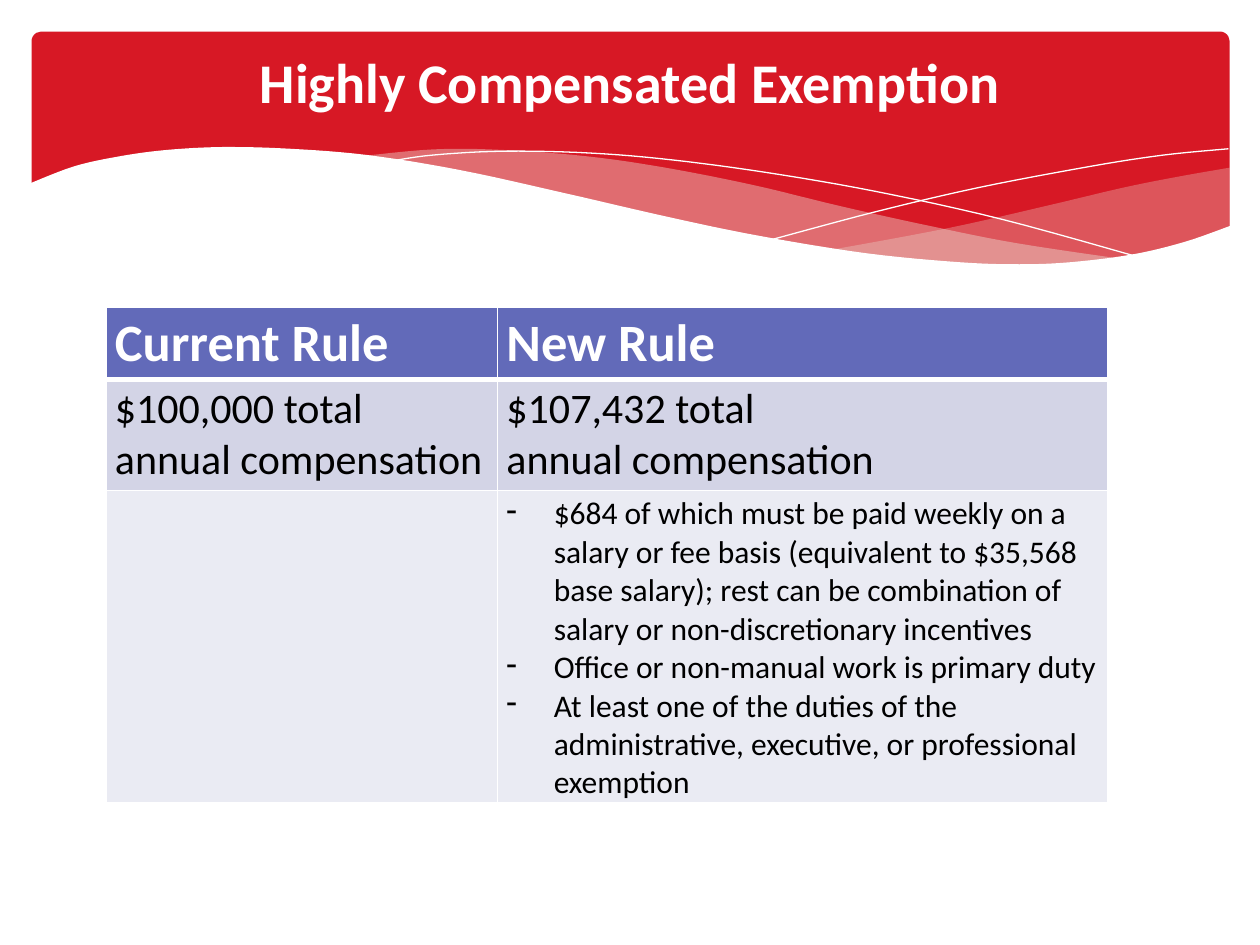
import dataclasses

import pptx
import pptx.dml.color
import pptx.enum.shapes
import pptx.enum.text
import pptx.oxml.ns
import pptx.util
from lxml import etree

Pt = pptx.util.Pt
qn = pptx.oxml.ns.qn


@dataclasses.dataclass(frozen=True)
class Theme:
    """Colours, font and type sizes of the slide."""
    font: str = "Calibri"
    banner: str = "D71825"
    wave: str = "EEECE1"
    white: str = "FFFFFF"
    black: str = "000000"
    rows: tuple = ("626AB9", "D3D4E6", "EAEBF3")
    row_sizes: tuple = (30, 24, 18)
    title_size: int = 32


THEME = Theme()

RIGHT_WAVE = (
    [(702.7, 95.8), (673, 101), (641.5, 107.3), (599, 117.4), (542, 130.3), (476, 142.6)],
    [(476, 142.6), (507.6, 147.6), (545, 150.5), (578, 151.9), (615, 150.5),
     (651.6, 145.4), (678, 138.2), (702.7, 129.6)],
)
LONG_WAVE = (
    [(643, 148.3), (581, 139), (533.5, 129.6), (481, 118), (430.6, 105.8), (380, 95.8),
     (335, 89.3), (287, 85.7), (247.7, 85.4), (206, 89.3)],
    [(206, 89.3), (246, 95), (291, 103.7), (323, 111.6), (381.6, 124.6), (432.7, 135.4),
     (489.6, 144.7), (530, 149.8), (573, 151.9), (610.6, 151.2), (643, 148.3)],
)
FALLING_LINE = [(222.5, 92.2), (247.7, 88.6), (288.7, 86.4), (337.7, 87.5), (384, 91.4),
                (438, 98.6), (500.4, 109.4), (572.4, 125.3), (653, 147.6)]
RISING_LINE = [(441.4, 136.8), (500.4, 121), (558.7, 107.3), (623.5, 95), (665, 88.6), (702, 85)]
LOWER_EDGE = [(703.4, 128.9), (677, 138.2), (647, 145.4), (612, 149.8), (582.5, 151),
              (548, 149.8), (495, 144.7), (434, 134.8), (381, 123.8), (322, 110.2),
              (263, 97.2), (210, 88.6), (165.6, 85), (127.4, 84), (95, 85.7),
              (68.4, 89.3), (42.5, 95), (16.6, 105)]
LOWER_CORNERS = [(16.6, 188.6), (703.4, 188.6)]

ROWS = [
    (["Current Rule"], ["New Rule"]),
    (["$100,000 total annual compensation"], ["$107,432 total\vannual compensation"]),
    ([], ["$684 of which must be paid weekly on a salary or fee basis (equivalent to "
          "$35,568 base salary); rest can be combination of salary or "
          "non-discretionary incentives",
          "Office or non-manual work is primary duty",
          "At least one of the duties of the administrative, executive, or "
          "professional exemption"]),
]
COL_WIDTHS = (223.75, 348.5)
ROW_HEIGHTS = (41, 63.5, 178.5)


def rgb(color):
    """Turn a hex string into a colour."""
    return pptx.dml.color.RGBColor.from_string(color)


def smooth(points, steps=6):
    """Sample a Catmull-Rom curve through the points."""
    ends = [points[0], *points, points[-1]]
    out = [points[0]]
    for a, b, c, d in zip(ends, ends[1:], ends[2:], ends[3:]):
        for i in range(1, steps + 1):
            t = i / steps
            out.append(tuple(
                q + (r - p) * t / 2 + (2 * p - 5 * q + 4 * r - v) * t ** 2 / 2
                + (3 * q - p - 3 * r + v) * t ** 3 / 2
                for p, q, r, v in zip(a, b, c, d)))
    return out


def paint(sp, color, alpha=None):
    """Fill a shape without outline, at an optional opacity in percent."""
    sp.shadow.inherit = False
    sp.line.fill.background()
    sp.fill.solid()
    sp.fill.fore_color.rgb = rgb(color)
    if alpha:
        clr = sp.fill._xPr.find(".//" + qn("a:srgbClr"))
        etree.SubElement(clr, qn("a:alpha"), val=str(alpha * 1000))


def add_outline(s, points, close):
    """Build a freeform through the points."""
    pts = [(Pt(x), Pt(y)) for x, y in points]
    builder = s.shapes.build_freeform(*pts[0])
    builder.add_line_segments(pts[1:], close=close)
    return builder.convert_to_shape()


def add_area(s, points, color, alpha=None):
    """Add a closed filled outline."""
    paint(add_outline(s, points, True), color, alpha)


def add_hairline(s, points):
    """Add a thin open curve."""
    sp = add_outline(s, smooth(points), False)
    sp.shadow.inherit = False
    sp.fill.background()
    sp.line.color.rgb = rgb(THEME.white)
    sp.line.width = Pt(0)


def add_banner(s):
    """Draw the banner with its waves."""
    sp = s.shapes.add_shape(pptx.enum.shapes.MSO_SHAPE.ROUNDED_RECTANGLE,
                            Pt(18), Pt(18), Pt(684.7), Pt(166.3))
    sp.adjustments[0] = 0.034
    paint(sp, THEME.banner)
    for (top, bottom), alpha in ((RIGHT_WAVE, 29), (LONG_WAVE, 40)):
        add_area(s, smooth(top) + smooth(bottom)[1:], THEME.wave, alpha)
    add_hairline(s, FALLING_LINE)
    add_hairline(s, RISING_LINE)
    add_area(s, smooth(LOWER_EDGE) + LOWER_CORNERS, THEME.white)


def format_run(r, size, color, bold):
    """Set the type of a run."""
    r.font.name = THEME.font
    r.font.size = Pt(size)
    r.font.bold = bold
    r.font.color.rgb = rgb(color)


def add_title(s, text):
    """Add the centred title."""
    tf = s.shapes.add_textbox(Pt(36), Pt(18), Pt(648), Pt(75)).text_frame
    tf.word_wrap = True
    tf.vertical_anchor = pptx.enum.text.MSO_ANCHOR.MIDDLE
    tf.margin_bottom = Pt(22)
    p = tf.paragraphs[0]
    p.text = text
    p.alignment = pptx.enum.text.PP_ALIGN.CENTER
    format_run(p.runs[0], THEME.title_size, THEME.white, True)


def set_borders(cell, top, bottom):
    """Give a cell white borders."""
    tc_pr = cell._tc.get_or_add_tcPr()
    for tag, width in (("a:lnL", 1), ("a:lnR", 1), ("a:lnT", top), ("a:lnB", bottom)):
        ln = etree.SubElement(tc_pr, qn(tag), w=str(Pt(width)))
        fill = etree.SubElement(ln, qn("a:solidFill"))
        etree.SubElement(fill, qn("a:srgbClr"), val=THEME.white)


def set_dash(p):
    """Give a paragraph a hanging dash bullet."""
    p_pr = p._p.get_or_add_pPr()
    p_pr.set("marL", str(Pt(27)))
    p_pr.set("indent", str(Pt(-27)))
    etree.SubElement(p_pr, qn("a:buChar"), char="-")


def fill_cell(cell, row, lines):
    """Style a cell and write its lines."""
    set_borders(cell, 3 if row == 1 else 1, 3 if row == 0 else 1)
    cell.fill.solid()
    cell.fill.fore_color.rgb = rgb(THEME.rows[row])
    cell.margin_left = cell.margin_right = Pt(5.2)
    cell.margin_top = cell.margin_bottom = Pt(2.6)
    tf = cell.text_frame
    for i, line in enumerate(lines):
        p = tf.add_paragraph() if i else tf.paragraphs[0]
        p.text = line
        if row == 2:
            set_dash(p)
        for r in p.runs:
            format_run(r, THEME.row_sizes[row], THEME.black if row else THEME.white, row == 0)


def add_rules(s):
    """Add the table that compares the rules."""
    table = s.shapes.add_table(len(ROWS), len(COL_WIDTHS), Pt(60.5), Pt(175.5),
                               Pt(sum(COL_WIDTHS)), Pt(sum(ROW_HEIGHTS))).table
    for col, width in zip(table.columns, COL_WIDTHS):
        col.width = Pt(width)
    for i, (height, cells) in enumerate(zip(ROW_HEIGHTS, ROWS)):
        table.rows[i].height = Pt(height)
        for j, lines in enumerate(cells):
            fill_cell(table.cell(i, j), i, lines)


def main():
    """Build and save the slide."""
    prs = pptx.Presentation()
    prs.slide_width, prs.slide_height = Pt(720), Pt(540)
    s = prs.slides.add_slide(prs.slide_layouts[6])
    add_banner(s)
    add_title(s, "Highly Compensated Exemption")
    add_rules(s)
    prs.save("out.pptx")


if __name__ == "__main__":
    main()
